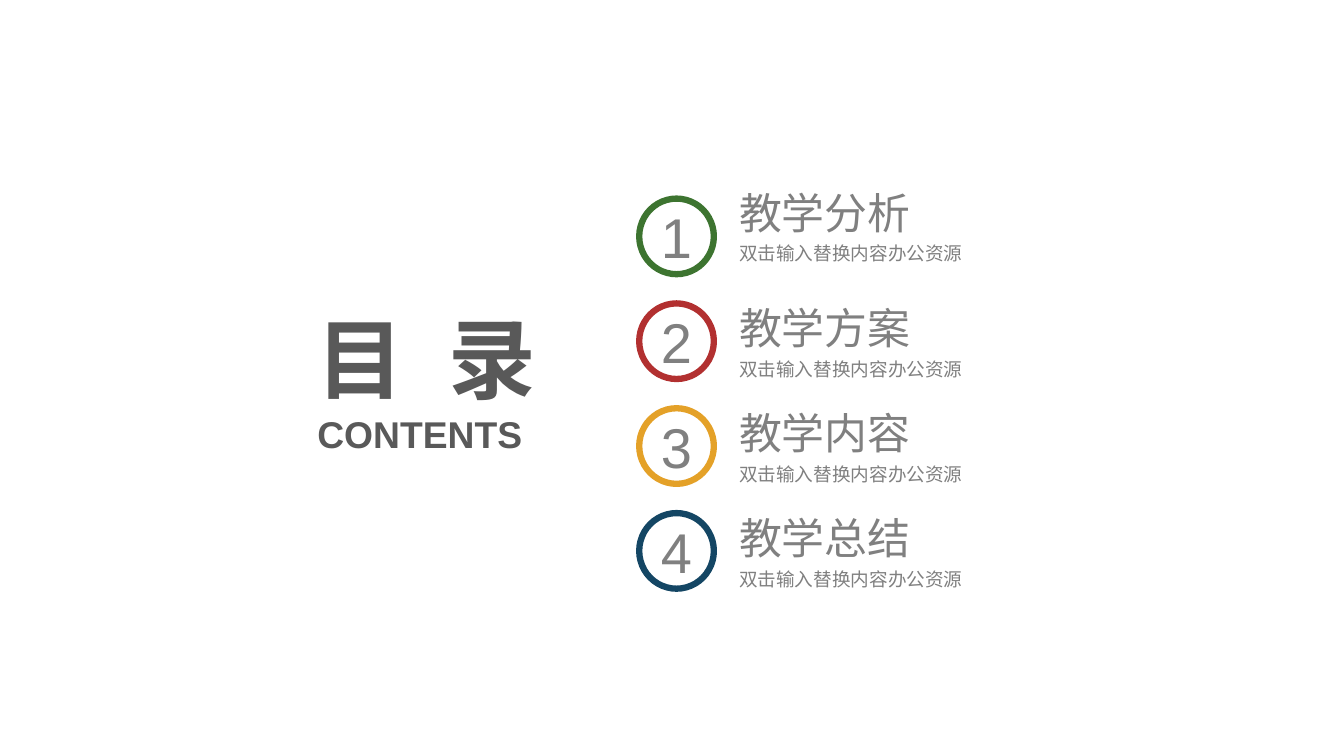
from dataclasses import dataclass

from lxml import etree
from pptx import Presentation
from pptx import util as u
from pptx.dml.color import RGBColor
from pptx.enum import shapes, text
from pptx.oxml import ns

LATIN_FONT = "Arial"
CHINESE_FONT = "Noto Sans CJK SC"
WHITE = RGBColor(0xFF, 0xFF, 0xFF)
GRAY = RGBColor(0x80, 0x80, 0x80)
DARK_GRAY = RGBColor(0x59, 0x59, 0x59)
GREEN = RGBColor(0x3D, 0x74, 0x30)
RED = RGBColor(0xB2, 0x30, 0x30)
AMBER = RGBColor(0xE4, 0xA1, 0x28)
NAVY = RGBColor(0x14, 0x46, 0x64)

FIRST_ROW_TOP = 1.97
ROW_PITCH = 1.04
CAPTION = "双击输入替换内容办公资源"


@dataclass(frozen=True)
class Chapter:
    heading: str
    color: RGBColor
    text_offset: float = -0.02  # text top relative to the ring top


CHAPTERS = [
    Chapter("教学分析", GREEN, -0.13),
    Chapter("教学方案", RED),
    Chapter("教学内容", AMBER),
    Chapter("教学总结", NAVY),
]


def style_paragraph(paragraph, size: float, color: RGBColor,
                    latin: str = LATIN_FONT, bold: bool = False) -> None:
    for run in paragraph.runs:
        run.font.size = u.Pt(size)
        run.font.bold = bold
        run.font.color.rgb = color
        run.font.name = latin
        east_asian = etree.SubElement(run.font._element, ns.qn("a:ea"))
        east_asian.set("typeface", CHINESE_FONT)


def set_frame(frame, anchor: text.MSO_ANCHOR, grow: bool = True) -> None:
    frame.margin_left = frame.margin_right = 0
    frame.margin_top = frame.margin_bottom = 0
    frame.word_wrap = True
    frame.vertical_anchor = anchor
    frame.auto_size = (text.MSO_AUTO_SIZE.SHAPE_TO_FIT_TEXT if grow
                       else text.MSO_AUTO_SIZE.NONE)


def add_ring(slide, number: int, top: float, color: RGBColor) -> None:
    ring = slide.shapes.add_shape(
        shapes.MSO_SHAPE.OVAL, u.Inches(6.34), u.Inches(top),
        u.Inches(0.74), u.Inches(0.75))
    ring.shadow.inherit = False
    ring.fill.solid()
    ring.fill.fore_color.rgb = WHITE
    ring.line.color.rgb = color
    ring.line.width = u.Pt(4.5)
    set_frame(ring.text_frame, text.MSO_ANCHOR.MIDDLE, grow=False)
    ring.text_frame.text = str(number)
    label = ring.text_frame.paragraphs[0]
    label.alignment = text.PP_ALIGN.CENTER
    style_paragraph(label, 40, GRAY)


def add_chapter_text(slide, chapter: Chapter, top: float) -> None:
    box = slide.shapes.add_textbox(
        u.Inches(7.33), u.Inches(top), u.Inches(2.81), u.Inches(0.79))
    set_frame(box.text_frame, text.MSO_ANCHOR.MIDDLE)
    box.text_frame.text = f"{chapter.heading}\n{CAPTION}"
    heading, caption = box.text_frame.paragraphs
    style_paragraph(heading, 30.6, GRAY)
    caption.line_spacing = 1.2
    style_paragraph(caption, 13.3, GRAY, CHINESE_FONT)


def add_title(slide) -> None:
    title = slide.shapes.title
    title.left, title.top = u.Inches(2.74), u.Inches(3.02)
    title.width, title.height = u.Inches(2.98), u.Inches(1.05)
    set_frame(title.text_frame, text.MSO_ANCHOR.MIDDLE)
    title.text_frame.text = "目 录"
    words = title.text_frame.paragraphs[0]
    words.alignment = text.PP_ALIGN.CENTER
    style_paragraph(words, 62.6, DARK_GRAY, bold=True)
    # Letter spacing widens the gap between the two characters
    words.runs[0].font._element.set("spc", "870")


def add_subtitle(slide) -> None:
    subtitle = slide.shapes.add_textbox(
        u.Inches(2.69), u.Inches(4.08), u.Inches(2.95), u.Inches(0.45))
    set_frame(subtitle.text_frame, text.MSO_ANCHOR.TOP)
    subtitle.text_frame.text = "CONTENTS"
    word = subtitle.text_frame.paragraphs[0]
    word.alignment = text.PP_ALIGN.CENTER
    style_paragraph(word, 26.6, DARK_GRAY, bold=True)


def main() -> None:
    deck = Presentation()
    deck.slide_width, deck.slide_height = u.Inches(13.33), u.Inches(7.5)
    slide = deck.slides.add_slide(deck.slide_layouts.get_by_name("Title Only"))

    # Title block
    add_title(slide)
    add_subtitle(slide)

    # Numbered chapters
    for index, chapter in enumerate(CHAPTERS):
        top = FIRST_ROW_TOP + index * ROW_PITCH
        add_ring(slide, index + 1, top, chapter.color)
        add_chapter_text(slide, chapter, top + chapter.text_offset)

    deck.save("out.pptx")


if __name__ == "__main__":
    main()
